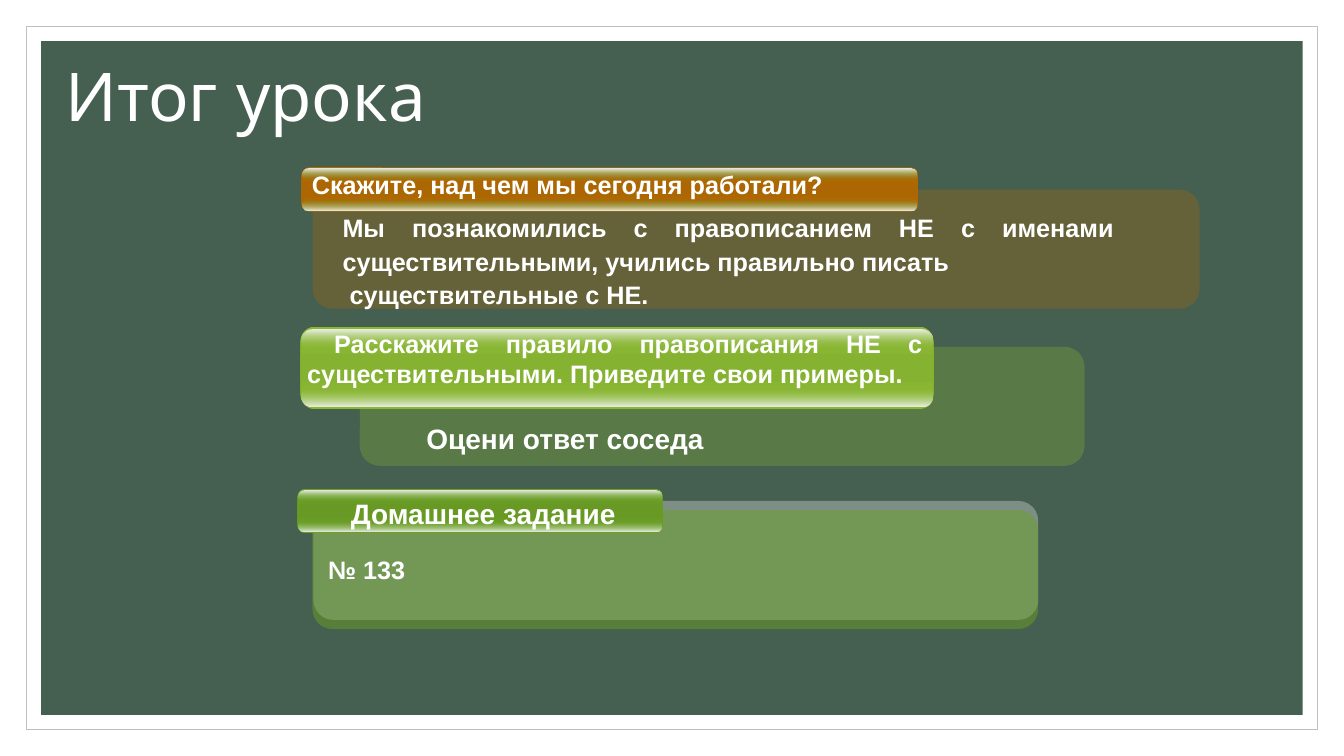
from lxml import etree
from pptx import Presentation
from pptx.dml.color import RGBColor
from pptx.enum.shapes import MSO_SHAPE
from pptx.enum.text import MSO_ANCHOR, PP_ALIGN
from pptx.oxml.ns import qn
from pptx.util import Pt

RECTANGLE, ROUNDED = MSO_SHAPE.RECTANGLE, MSO_SHAPE.ROUNDED_RECTANGLE
MIDDLE, TOP = MSO_ANCHOR.MIDDLE, MSO_ANCHOR.TOP
LEFT, CENTER, JUSTIFY = PP_ALIGN.LEFT, PP_ALIGN.CENTER, PP_ALIGN.JUSTIFY

WHITE = RGBColor(0xFF, 0xFF, 0xFF)
FRAME_GRAY = RGBColor(0xBF, 0xBF, 0xBF)
BOARD_GREEN = RGBColor(0x45, 0x5F, 0x51)
BROWN = RGBColor(0xB2, 0x6B, 0x02)
BROWN_MID = RGBColor(0xAC, 0x67, 0x02)
LIME = RGBColor(0x8A, 0xB8, 0x33)
LIME_MID = RGBColor(0x85, 0xB2, 0x31)
LEAF = RGBColor(0x6B, 0x9F, 0x25)
LEAF_MID = RGBColor(0x67, 0x99, 0x24)
FOREST = RGBColor(0x54, 0x9E, 0x39)
SHINE = RGBColor(0xEC, 0xF1, 0xE9)

SLIDE_WIDTH, SLIDE_HEIGHT = 960, 540
CARD_HEIGHT = 85
BODY_FONT, TITLE_FONT = "Arial", "Quicksand"


def add_block(shapes, kind, box, color, opacity=100, corner=None):
    block = shapes.add_shape(kind, *map(Pt, box))
    block.shadow.inherit = False
    block.fill.solid()
    block.fill.fore_color.rgb = color
    block.line.fill.background()
    if corner is not None:
        block.adjustments[0] = corner
    if opacity < 100:
        set_opacity(block._element.spPr.find(".//" + qn("a:srgbClr")), opacity)
    return block


def set_opacity(color_element, opacity):
    etree.SubElement(color_element, qn("a:alpha"), val=str(opacity * 1000))


def set_gradient(block, stops):
    solid = block._element.spPr.find(qn("a:solidFill"))
    gradient = etree.Element(qn("a:gradFill"), rotWithShape="1")
    stop_list = etree.SubElement(gradient, qn("a:gsLst"))
    for position, color, opacity in stops:
        stop = etree.SubElement(stop_list, qn("a:gs"), pos=str(position * 1000))
        color_element = etree.SubElement(stop, qn("a:srgbClr"), val=str(color))
        if opacity < 100:
            set_opacity(color_element, opacity)
    etree.SubElement(gradient, qn("a:lin"), ang="5400000", scaled="0")
    solid.getparent().replace(solid, gradient)


def write(frame, lines, size, align=LEFT, spacing=None, wrap=True, anchor=TOP):
    frame.word_wrap = wrap
    frame.vertical_anchor = anchor
    for index, line in enumerate(lines):
        paragraph = frame.paragraphs[0] if index == 0 else frame.add_paragraph()
        paragraph.alignment = align
        if spacing:
            paragraph.line_spacing = spacing
        run = paragraph.add_run()
        run.text = line
        run.font.name = BODY_FONT
        run.font.size = Pt(size)
        run.font.bold = True
        run.font.color.rgb = WHITE


def add_caption(slide, box, lines, size, **layout):
    caption = slide.shapes.add_textbox(*map(Pt, box))
    write(caption.text_frame, lines, size, **layout)


def add_card(slide, box, color, opacity=30):
    return add_block(slide.shapes, ROUNDED, box, color, opacity, 0.167)


def add_tab(slide, box, edge, middle, gloss):
    left, top, width, height = box
    tab = slide.shapes.add_group_shape().shapes
    base = add_block(tab, ROUNDED, box, edge, corner=0.175)
    set_gradient(base, [(0, edge, 100), (50, middle, 100), (100, edge, 100)])
    inset, gloss_height = height * 0.03, height / 4
    glosses = [
        (top + height - inset - gloss_height, [(0, gloss, 0), (100, SHINE, 100)]),
        (top + inset, [(0, SHINE, 100), (100, gloss, 0)]),
    ]
    for gloss_top, stops in glosses:
        gloss_box = (left + 1, gloss_top, width - 2, gloss_height)
        set_gradient(add_block(tab, ROUNDED, gloss_box, gloss, corner=0.5), stops)


def add_board(slide):
    for margin, color in ((18.7, WHITE), (29.4, BOARD_GREEN)):
        box = (margin, margin, SLIDE_WIDTH - 2 * margin, SLIDE_HEIGHT - 2 * margin)
        board = add_block(slide.shapes, RECTANGLE, box, color)
        if color == WHITE:
            board.line.color.rgb = FRAME_GRAY
            board.line.width = Pt(0.5)


def add_title(slide, left, top, width, height):
    title = slide.shapes.title
    title.left, title.top, title.width, title.height = map(Pt, (left, top, width, height))
    title.text_frame.vertical_anchor = MIDDLE
    paragraph = title.text_frame.paragraphs[0]
    paragraph.alignment = LEFT
    paragraph.line_spacing = 0.9
    run = paragraph.add_run()
    run.text = "Итог урока"
    run.font.name = TITLE_FONT
    run.font.size = Pt(48)
    run.font.color.rgb = WHITE
    slide.shapes._spTree.append(title._element)


def add_lesson_question(slide, left, top):
    add_card(slide, (left + 8, top + 16, 633.6, CARD_HEIGHT), BROWN)
    add_tab(slide, (left, top, 440.6, 31.7), BROWN, BROWN_MID, FOREST)
    add_caption(slide, (left - 6.5, top - 2.1, 388, 29),
                [" Скажите, над чем мы сегодня работали?"], 18, align=CENTER)
    answer = ["Мы познакомились с правописанием НЕ с именами "
              "существительными, учились правильно писать",
              " существительные с НЕ."]
    add_caption(slide, (left + 22.3, top + 26.7, 565.2, 78.5), answer, 18,
                align=JUSTIFY, spacing=1.1)


def add_rule_question(slide, left, top):
    add_card(slide, (left + 42.4, top + 14.4, 517.7, CARD_HEIGHT), LIME)
    add_tab(slide, (left, top, 452.2, 59), LIME, LIME_MID, LIME)
    add_caption(slide, (left - 2.2, top - 2.2, 453.6, 51),
                [" Расскажите правило правописания НЕ с существительными. "
                 "Приведите свои примеры."], 18, align=JUSTIFY)
    add_caption(slide, (left + 82.8, top + 64.1, 430.6, 31.7),
                ["Оцени ответ соседа"], 20)


def add_homework(slide, left, top):
    add_card(slide, (left + 11.5, top + 8.6, 517.7, CARD_HEIGHT), WHITE)
    task = add_card(slide, (left + 10.8, top + 15.1, 518.4, CARD_HEIGHT), LEAF, 50)
    write(task.text_frame, ["№ 133"], 18, anchor=MIDDLE)
    add_tab(slide, (left, top, 261.4, 31.7), LEAF, LEAF_MID, LEAF)
    add_caption(slide, (left + 25.2, top + 2.2, 209.5, 31.7),
                [" Домашнее задание"], 20, align=CENTER, wrap=False)


def main():
    presentation = Presentation()
    presentation.slide_width = Pt(SLIDE_WIDTH)
    presentation.slide_height = Pt(SLIDE_HEIGHT)
    slide = presentation.slides.add_slide(presentation.slide_layouts[5])
    add_board(slide)
    add_lesson_question(slide, 215.3, 119.5)
    add_rule_question(slide, 214.6, 233.3)
    add_homework(slide, 212.4, 349.2)
    add_title(slide, 39.6, 17.3, 792, 108)
    presentation.save("out.pptx")


if __name__ == "__main__":
    main()
